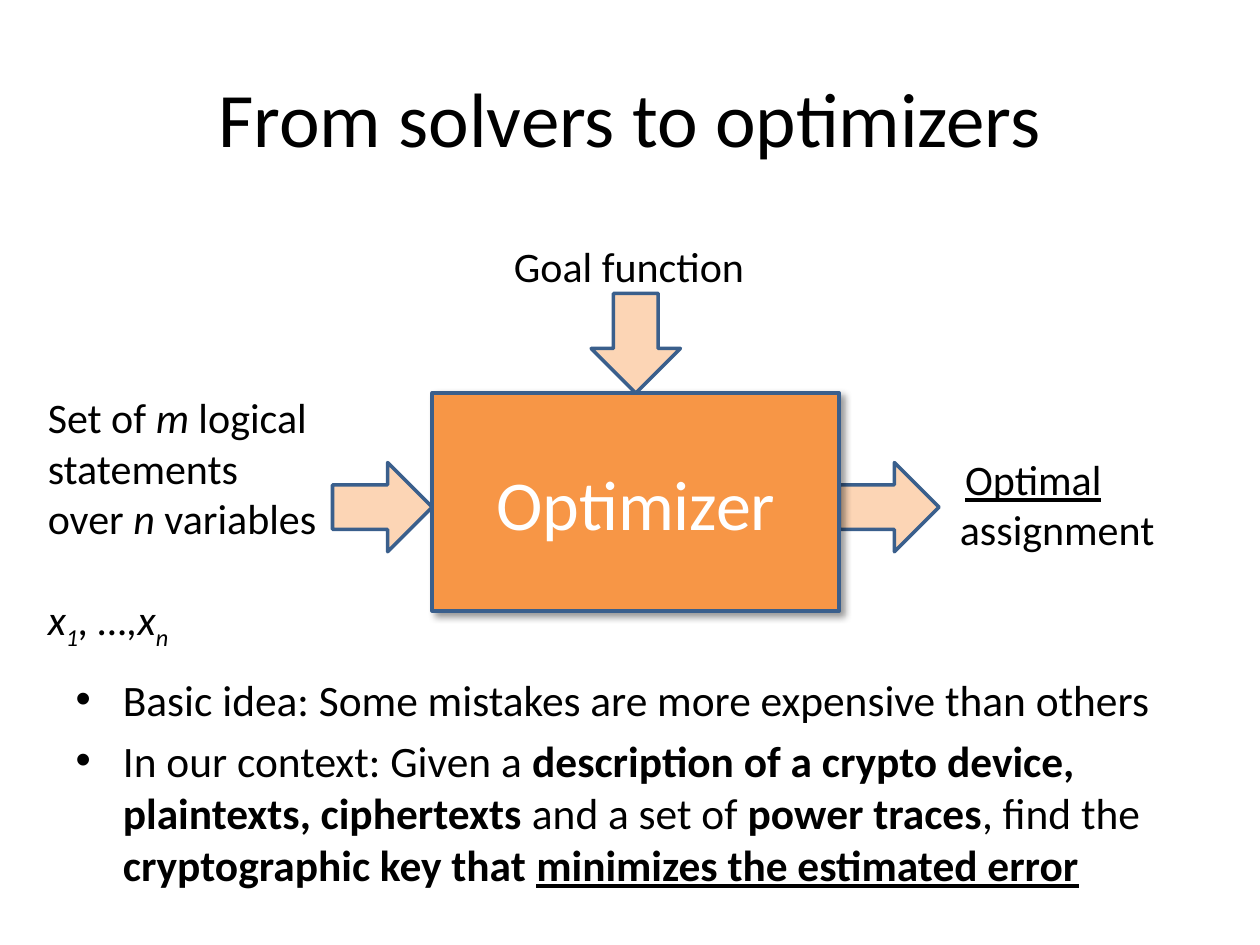
from dataclasses import dataclass

from lxml.etree import SubElement
from pptx import Presentation
from pptx.dml.color import RGBColor
from pptx.enum.shapes import MSO_SHAPE as Shape
from pptx.enum.text import MSO_ANCHOR as Anchor, MSO_AUTO_SIZE as AutoSize, PP_ALIGN as Align
from pptx.oxml.ns import qn
from pptx.util import Pt


@dataclass(frozen=True)
class Theme:
    font: str = "Calibri"
    ink: str = "000000"
    white: str = "FFFFFF"
    box_fill: str = "F79646"
    arrow_fill: str = "FCD5B5"
    outline: str = "3A5F8C"
    title_size: float = 44
    box_size: float = 40
    body_size: float = 24.8
    label_size: float = 24


THEME = Theme()
ARROW_LENGTH, ARROW_WIDTH = 57, 51
BOX_LEFT, BOX_TOP, BOX_WIDTH, BOX_HEIGHT = 247, 224.6, 232.6, 124.6
FLOW_Y = 289.8  # centre line of the horizontal arrows


def write(para, runs, size=THEME.label_size, color=THEME.ink, align=None, before=0):
    """Fill a paragraph from (text, style) runs; style letters: b, i, u and _ for subscript."""
    para.space_before = Pt(before)
    if align is not None:
        para.alignment = align
    for text, style in runs:
        span = para.add_run()
        span.text = text
        font = span.font
        font.name, font.size = THEME.font, Pt(size)
        font.color.rgb = RGBColor.from_string(color)
        font.bold, font.italic, font.underline = ("b" in style, "i" in style, "u" in style)
        if "_" in style:
            font._element.set("baseline", "-25000")


def place(shape, left, top, width, height):
    shape.left, shape.top, shape.width, shape.height = map(Pt, (left, top, width, height))


def add_label(page, left, top, width, height):
    """Add an empty wrapping text box and return its text frame."""
    frame = page.shapes.add_textbox(*map(Pt, (left, top, width, height))).text_frame
    frame.word_wrap = True
    return frame


def add_block(page, kind, left, top, width, height, fill):
    block = page.shapes.add_shape(kind, *map(Pt, (left, top, width, height)))
    block.shadow.inherit = False
    block.fill.solid()
    block.fill.fore_color.rgb = RGBColor.from_string(fill)
    block.line.color.rgb = RGBColor.from_string(THEME.outline)
    block.line.width = Pt(2)
    return block


def add_arrow(page, center_x, center_y, rotation=0):
    arrow = add_block(page, Shape.RIGHT_ARROW, center_x - ARROW_LENGTH / 2,
                      center_y - ARROW_WIDTH / 2, ARROW_LENGTH, ARROW_WIDTH, THEME.arrow_fill)
    arrow.rotation = rotation


def add_shadow(shape):
    effects = shape._element.spPr.find(qn("a:effectLst"))
    shadow = SubElement(effects, qn("a:outerShdw"), blurRad=str(Pt(4)), dist=str(Pt(3)),
                        dir=str(45 * 60000), algn="tl", rotWithShape="0")
    color = SubElement(shadow, qn("a:srgbClr"), val=THEME.ink)
    SubElement(color, qn("a:alpha"), val="40000")


def add_title(page, text):
    title = page.shapes.title
    place(title, 36, 21.6, 648, 90)
    title.text_frame.vertical_anchor = Anchor.MIDDLE
    write(title.text_frame.paragraphs[0], [(text, "")], THEME.title_size, align=Align.CENTER)


def add_bullets(page, items):
    body = page.placeholders[1]
    place(body, 36, 380.9, 648, 121.7)
    frame = body.text_frame
    frame.auto_size = AutoSize.NONE
    for index, runs in enumerate(items):
        para = frame.add_paragraph() if index else frame.paragraphs[0]
        write(para, runs, THEME.body_size, before=5 if index else 0)


def add_diagram(page):
    box_right = BOX_LEFT + BOX_WIDTH
    box_center = BOX_LEFT + BOX_WIDTH / 2
    add_arrow(page, BOX_LEFT - ARROW_LENGTH / 2, FLOW_Y)
    add_arrow(page, box_right + ARROW_LENGTH / 2, FLOW_Y)

    inputs = add_label(page, 20.2, 220.3, 170, 124)
    write(inputs.paragraphs[0], [("Set of ", ""), ("m", "i"), (" logical statements over ", ""),
                                 ("n", "i"), (" variables", "")])
    write(inputs.add_paragraph(), [("x", "i"), ("1", "i_"), (", …,x", "i"), ("n", "i_")],
          before=29)

    result = add_label(page, 541.4, 255.6, 178.6, 65.5)
    optimal = result.paragraphs[0]
    optimal._p.get_or_add_pPr().set("marL", str(Pt(3)))
    write(optimal, [("Optimal", "u")])
    write(result.add_paragraph(), [("assignment", "")])

    box = add_block(page, Shape.RECTANGLE, BOX_LEFT, BOX_TOP, BOX_WIDTH, BOX_HEIGHT,
                    THEME.box_fill)
    add_shadow(box)
    box.text_frame.vertical_anchor = Anchor.MIDDLE
    write(box.text_frame.paragraphs[0], [("Optimizer", "")], THEME.box_size, THEME.white,
          Align.CENTER)

    add_arrow(page, box_center, BOX_TOP - ARROW_LENGTH / 2, rotation=90)
    goal = add_label(page, 286.6, 133.9, 153.4, 36)
    write(goal.paragraphs[0], [("Goal function", "")])


def main():
    deck = Presentation()
    deck.slide_width, deck.slide_height = Pt(720), Pt(540)
    page = deck.slides.add_slide(deck.slide_layouts[1])
    add_title(page, "From solvers to optimizers")
    add_bullets(page, [
        [("Basic idea: Some mistakes are more expensive than others", "")],
        [("In our context: Given a ", ""),
         ("description of a crypto device, plaintexts, ciphertexts ", "b"),
         ("and a set of ", ""), ("power traces", "b"), (", find the ", ""),
         ("cryptographic key that ", "b"), ("minimizes the estimated error", "bu")],
    ])
    add_diagram(page)
    deck.save("out.pptx")


if __name__ == "__main__":
    main()
